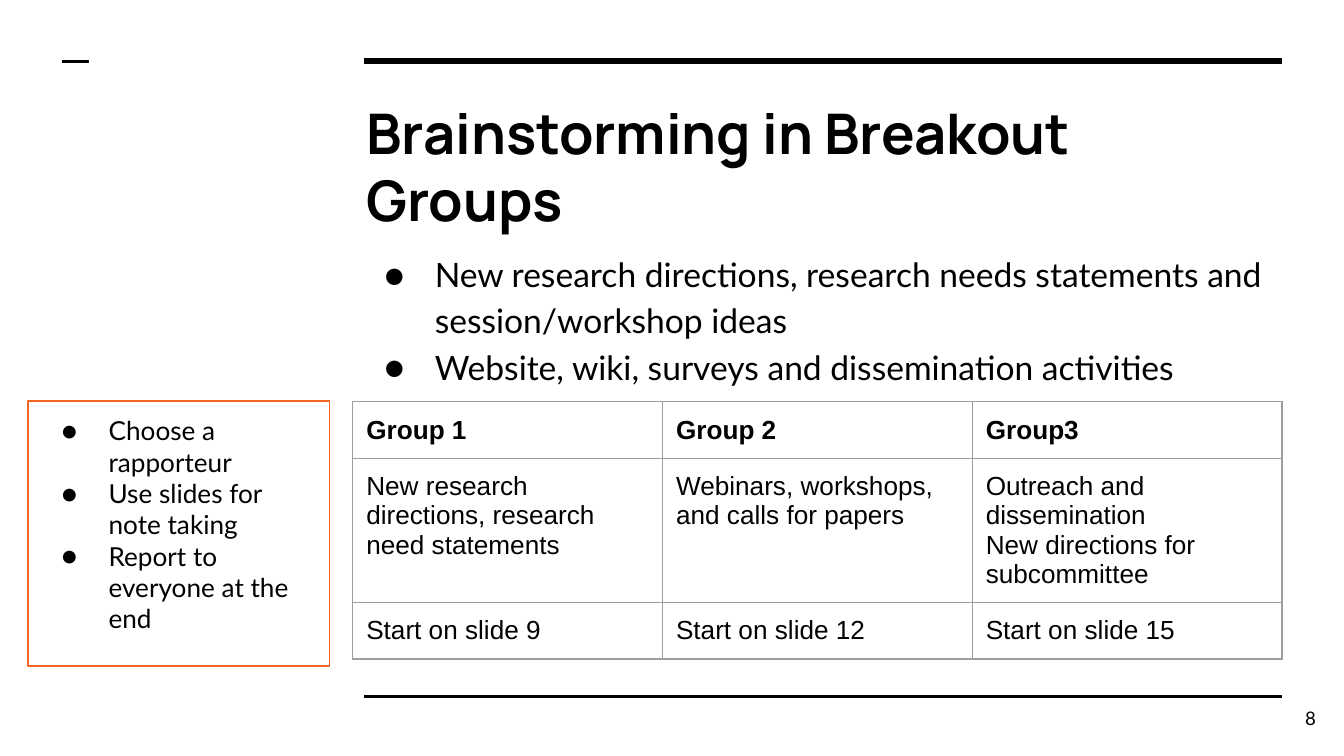
from lxml import etree
from pptx import Presentation
from pptx.dml.color import RGBColor
from pptx.enum.shapes import MSO_CONNECTOR, MSO_SHAPE
from pptx.enum.text import MSO_ANCHOR, MSO_AUTO_SIZE, PP_ALIGN
from pptx.oxml.ns import qn
from pptx.util import Pt

PX = 4572  # EMU per px, 200 px to the inch
PAD = 20
LEFT, RIGHT = PP_ALIGN.LEFT, PP_ALIGN.RIGHT
TOP, MIDDLE = MSO_ANCHOR.TOP, MSO_ANCHOR.MIDDLE
STRAIGHT, RECT = MSO_CONNECTOR.STRAIGHT, MSO_SHAPE.RECTANGLE
NO_FIT = MSO_AUTO_SIZE.NONE

COLORS = {"ink": "000000", "accent": "F46524", "grid": "9E9E9E"}

GOALS = [
    "New research directions, research needs statements and session/workshop ideas",
    "Website, wiki, surveys and dissemination activities",
]
TASKS = [
    "Choose a rapporteur",
    "Use slides for note taking",
    "Report to everyone at the end",
]
GROUPS = [
    ["Group 1", "Group 2", "Group3"],
    ["New research directions, research need statements",
     "Webinars, workshops, and calls for papers",
     "Outreach and dissemination\nNew directions for subcommittee"],
    ["Start on slide 9", "Start on slide 12", "Start on slide 15"],
]
HEIGHTS = [83, 214, 84]


def px(*nums):
    return [num * PX for num in nums]


def color(name):
    return RGBColor.from_string(COLORS[name])


def add_rule(slide, left, right, y, width):
    line = slide.shapes.add_connector(STRAIGHT, *px(left, y, right, y))
    line.line.color.rgb = color("ink")
    line.line.width = Pt(width)
    etree.SubElement(line._element.spPr, qn("a:effectLst"))


def set_box(shape, *box):
    shape.left, shape.top, shape.width, shape.height = px(*box)


def write(frame, text, font, size, bold=False, align=LEFT, space=None):
    frame.text = text
    for para in frame.paragraphs:
        para.alignment = align
        para.space_before = Pt(0)
        if space:
            para.line_spacing = space
        para.font.name = font
        para.font.size = Pt(size)
        para.font.bold = bold
        para.font.color.rgb = color("ink")


def pad(part):
    part.margin_left = part.margin_right = PAD * PX
    part.margin_top = part.margin_bottom = PAD * PX


def set_frame(frame, anchor=TOP):
    frame.word_wrap = True
    frame.auto_size = NO_FIT
    frame.vertical_anchor = anchor
    pad(frame)


def add_dots(frame, hang):
    for para in frame.paragraphs:
        props = para._p.get_or_add_pPr()
        props.set("marL", str(100 * PX))
        props.set("indent", str(-hang * PX))
        tint = etree.SubElement(props, qn("a:buClr"))
        etree.SubElement(tint, qn("a:srgbClr"), val=COLORS["ink"])
        etree.SubElement(props, qn("a:buFont"), typeface="Lato")
        etree.SubElement(props, qn("a:buChar"), char="●")
        # The default run properties come last in the schema
        for tail in props.findall(qn("a:defRPr")):
            props.append(tail)


def set_edges(cell):
    props = cell._tc.get_or_add_tcPr()
    for spot, side in enumerate(("L", "R", "T", "B")):
        edge = etree.Element(qn(f"a:ln{side}"), w=str(Pt(0.75)))
        fill = etree.SubElement(edge, qn("a:solidFill"))
        etree.SubElement(fill, qn("a:srgbClr"), val=COLORS["grid"])
        props.insert(spot, edge)


def add_table(slide, rows, left, top, width):
    frame = slide.shapes.add_table(
        len(rows), len(rows[0]), *px(left, top, width, sum(HEIGHTS)))
    table = frame.table
    for row, high in zip(table.rows, HEIGHTS):
        row.height = high * PX
    for r, row in enumerate(rows):
        for c, text in enumerate(row):
            cell = table.cell(r, c)
            cell.fill.background()
            pad(cell)
            write(cell.text_frame, text, "Arial", 14, bold=r == 0)
            set_edges(cell)


def add_tasks(slide):
    box = slide.shapes.add_shape(RECT, *px(42, 597, 449, 394))
    box.shadow.inherit = False
    box.fill.background()
    box.line.color.rgb = color("accent")
    box.line.width = Pt(0.75)
    set_frame(box.text_frame)
    write(box.text_frame, "\n".join(TASKS), "Lato", 14)
    add_dots(box.text_frame, 70)


def add_number(slide, text):
    box = slide.shapes.add_textbox(*px(1858, 1026, 120, 86))
    set_frame(box.text_frame, MIDDLE)
    write(box.text_frame, text, "Lato", 10, align=RIGHT)


def main():
    deck = Presentation()
    deck.slide_width, deck.slide_height = px(2000, 1125)
    slide = deck.slides.add_slide(deck.slide_layouts[1])

    # Frame rules
    add_rule(slide, 542, 1908, 91, 3)
    add_rule(slide, 542, 1908, 1036, 1.5)
    add_rule(slide, 93, 133, 91, 1.5)

    # Title and goals
    title, body = slide.placeholders
    set_box(title, 525, 126, 1382, 138)
    set_frame(title.text_frame)
    write(title.text_frame, "Brainstorming in Breakout Groups", "Manrope", 30, bold=True)
    set_box(body, 527, 349, 1382, 656)
    set_frame(body.text_frame)
    write(body.text_frame, "\n".join(GOALS), "Lato", 18, space=1.15)
    add_dots(body.text_frame, 75)

    # Groups, page number and tasks
    add_table(slide, GROUPS, 525, 598, 1383)
    add_number(slide, "8")
    add_tasks(slide)

    deck.save("out.pptx")


if __name__ == "__main__":
    main()
